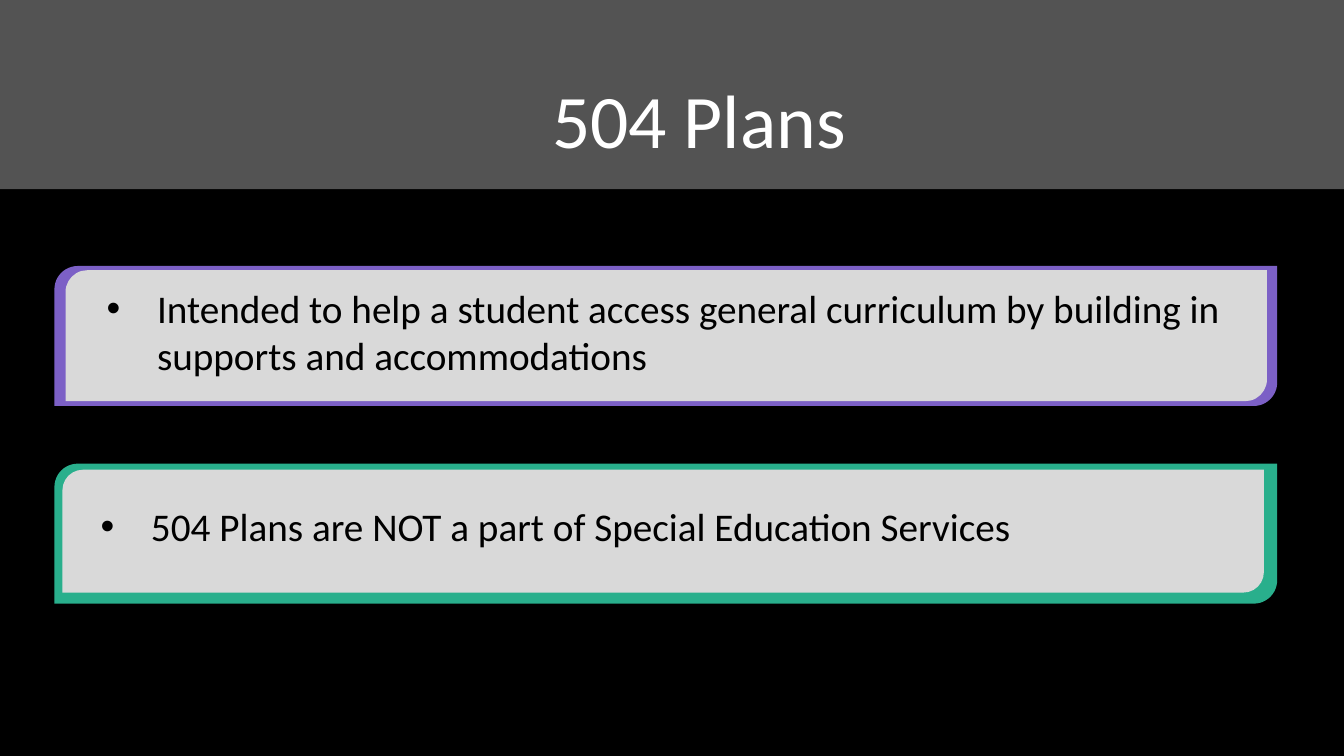
from dataclasses import dataclass

import pptx
import pptx.dml.color
import pptx.enum.shapes
import pptx.enum.text
import pptx.oxml.ns
import pptx.util
from lxml import etree

Pt = pptx.util.Pt
Box = tuple[float, float, float, float]  # left, top, width, height


@dataclass(frozen=True)
class Theme:
    font: str = "Calibri"
    title: float = 54
    body: float = 28
    back: str = "000000"
    band: str = "A6A6A6"
    panel: str = "D9D9D9"
    light: str = "FFFFFF"
    dark: str = "000000"
    violet: str = "7C60C6"
    green: str = "29AF8C"


@dataclass(frozen=True)
class Card:
    tint: str
    frame: Box
    panel: Box
    label: Box
    text: str


THEME = Theme()
WIDE, HIGH = 960, 540
CARDS = [
    Card(THEME.violet, (38.9, 190, 873.4, 100), (46.8, 193, 858.2, 93.6),
         (69.1, 199.4, 837.4, 74.9),
         "Intended to help a student access general curriculum "
         "by building in supports and accommodations"),
    Card(THEME.green, (38.9, 331.2, 873.4, 100), (44.6, 335.5, 858.2, 87.8),
         (64.8, 355, 837.4, 41),
         "504 Plans are NOT a part of Special Education Services"),
]


def rgb(code: str) -> pptx.dml.color.RGBColor:
    return pptx.dml.color.RGBColor.from_string(code)


def block(slide, kind, box: Box, fill: str):
    shape = slide.shapes.add_shape(kind, *map(Pt, box))
    shape.shadow.inherit = False
    shape.fill.solid()
    shape.fill.fore_color.rgb = rgb(fill)
    shape.line.fill.background()
    return shape


def style(para, size: float, color: str) -> None:
    for run in para.runs:
        run.font.name = THEME.font
        run.font.size = Pt(size)
        run.font.color.rgb = rgb(color)


def fade(shape, share: int) -> None:
    """Set the opacity of a solid fill, in percent."""
    tone = shape.element.spPr.find(".//" + pptx.oxml.ns.qn("a:srgbClr"))
    etree.SubElement(tone, pptx.oxml.ns.qn("a:alpha"), val=str(share * 1000))


def bullet(para, indent: float) -> None:
    props = para._p.get_or_add_pPr()
    props.set("marL", str(Pt(indent)))
    props.set("indent", str(-Pt(indent)))
    etree.SubElement(props, pptx.oxml.ns.qn("a:buFont"), typeface="Arial")
    etree.SubElement(props, pptx.oxml.ns.qn("a:buChar"), char="•")


def head(slide) -> None:
    """Draw the top band and set the title in front of it."""
    band = block(slide, pptx.enum.shapes.MSO_SHAPE.RECTANGLE,
                 (0, 0, WIDE, 135.2), THEME.band)
    fade(band, 50)
    title = slide.shapes.title
    band.element.addnext(title.element)
    title.left, title.top, title.width, title.height = map(
        Pt, (385.9, 48.2, 226.8, 72.7))
    frame = title.text_frame
    frame.text = "504 Plans"
    frame.word_wrap = False
    frame.auto_size = pptx.enum.text.MSO_AUTO_SIZE.NONE
    frame.vertical_anchor = pptx.enum.text.MSO_ANCHOR.TOP
    para = frame.paragraphs[0]
    para.alignment = pptx.enum.text.PP_ALIGN.CENTER
    style(para, THEME.title, THEME.light)


def draw(slide, card: Card) -> None:
    kind = pptx.enum.shapes.MSO_SHAPE.ROUND_2_DIAG_RECTANGLE
    block(slide, kind, card.frame, card.tint)
    block(slide, kind, card.panel, THEME.panel)
    frame = slide.shapes.add_textbox(*map(Pt, card.label)).text_frame
    frame.word_wrap = True
    frame.text = card.text
    para = frame.paragraphs[0]
    bullet(para, 36)
    style(para, THEME.body, THEME.dark)


def main() -> None:
    deck = pptx.Presentation()
    deck.slide_width, deck.slide_height = Pt(WIDE), Pt(HIGH)
    slide = deck.slides.add_slide(deck.slide_layouts.get_by_name("Title Only"))
    slide.background.fill.solid()
    slide.background.fill.fore_color.rgb = rgb(THEME.back)
    head(slide)
    for card in CARDS:
        draw(slide, card)
    deck.save("out.pptx")


if __name__ == "__main__":
    main()
